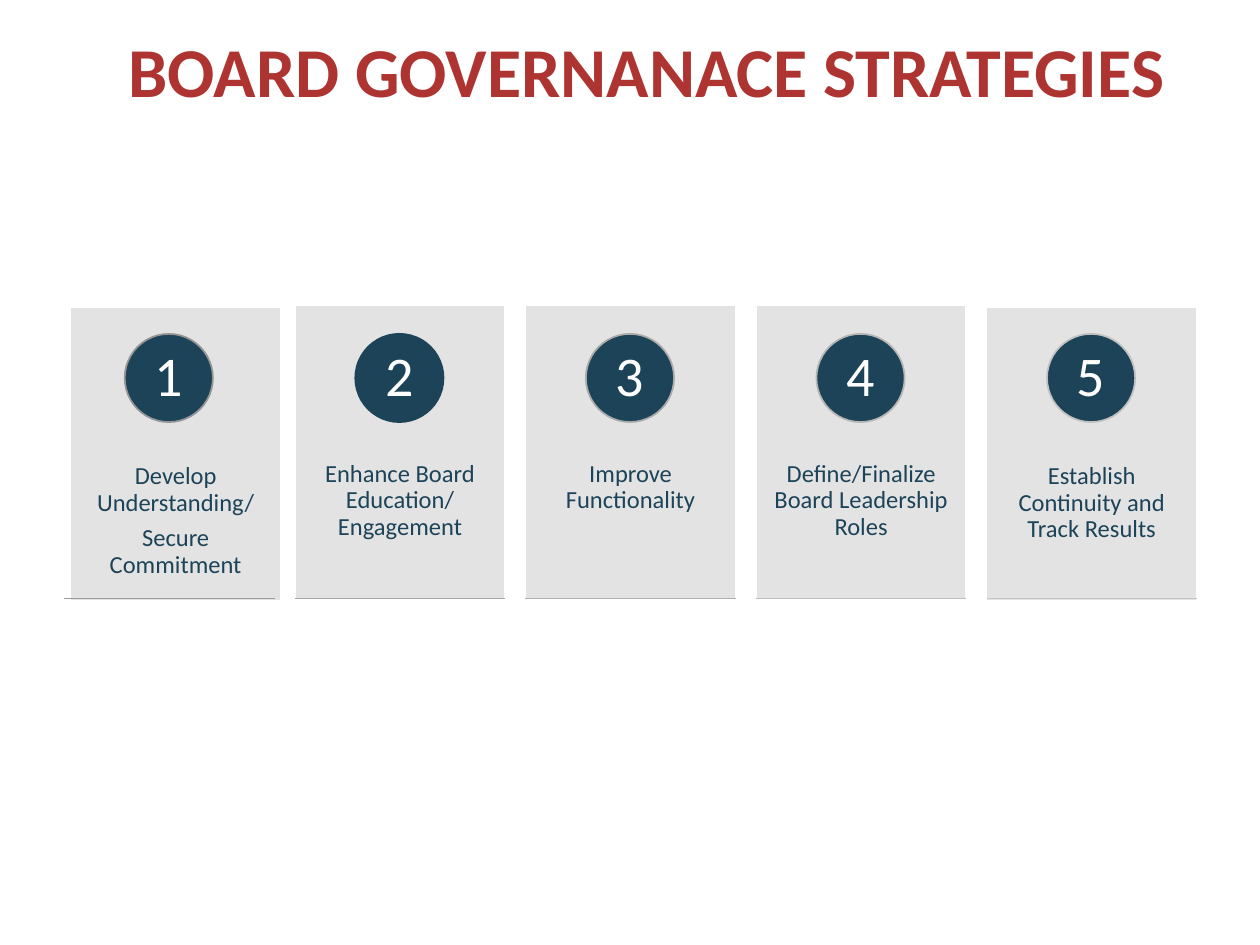
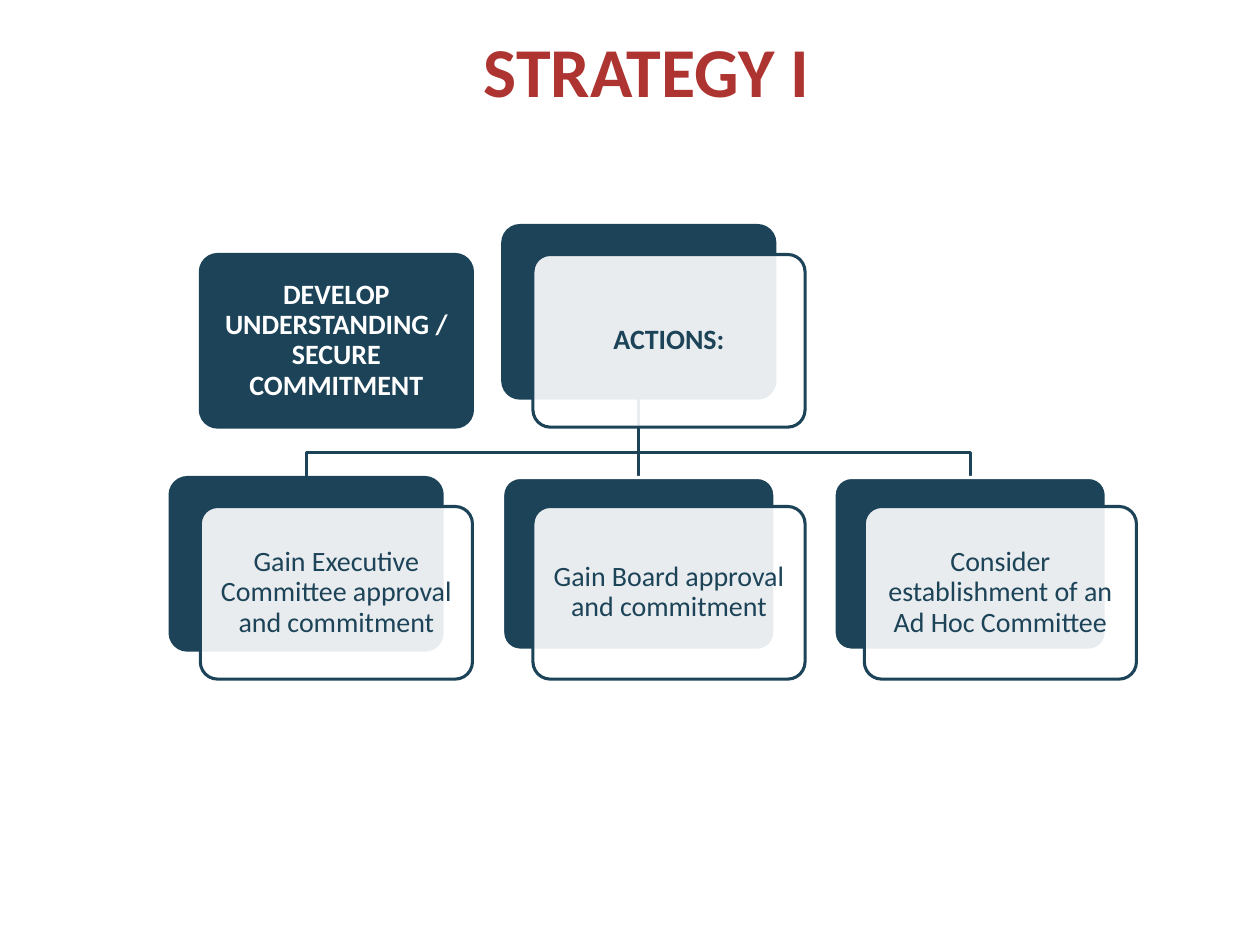
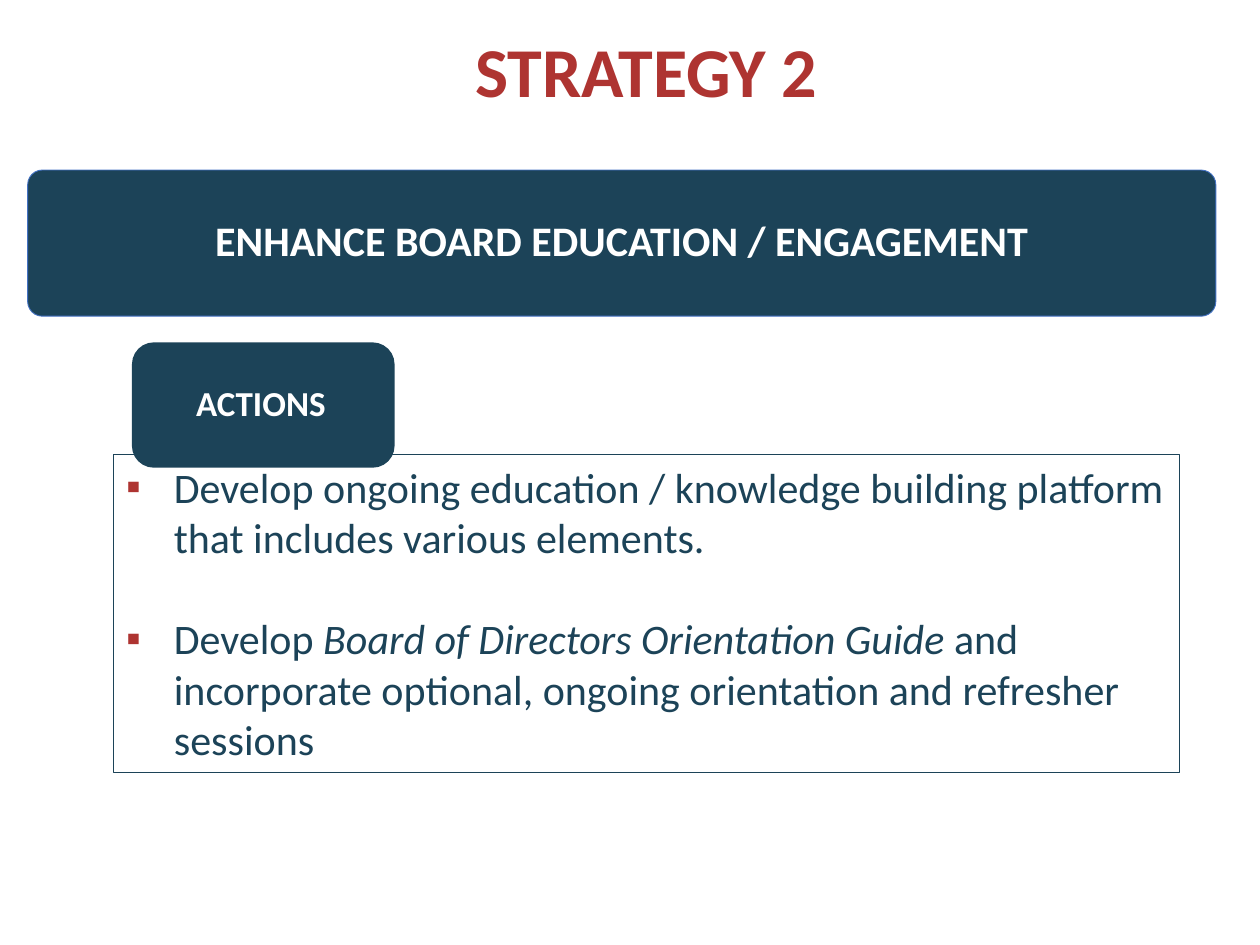
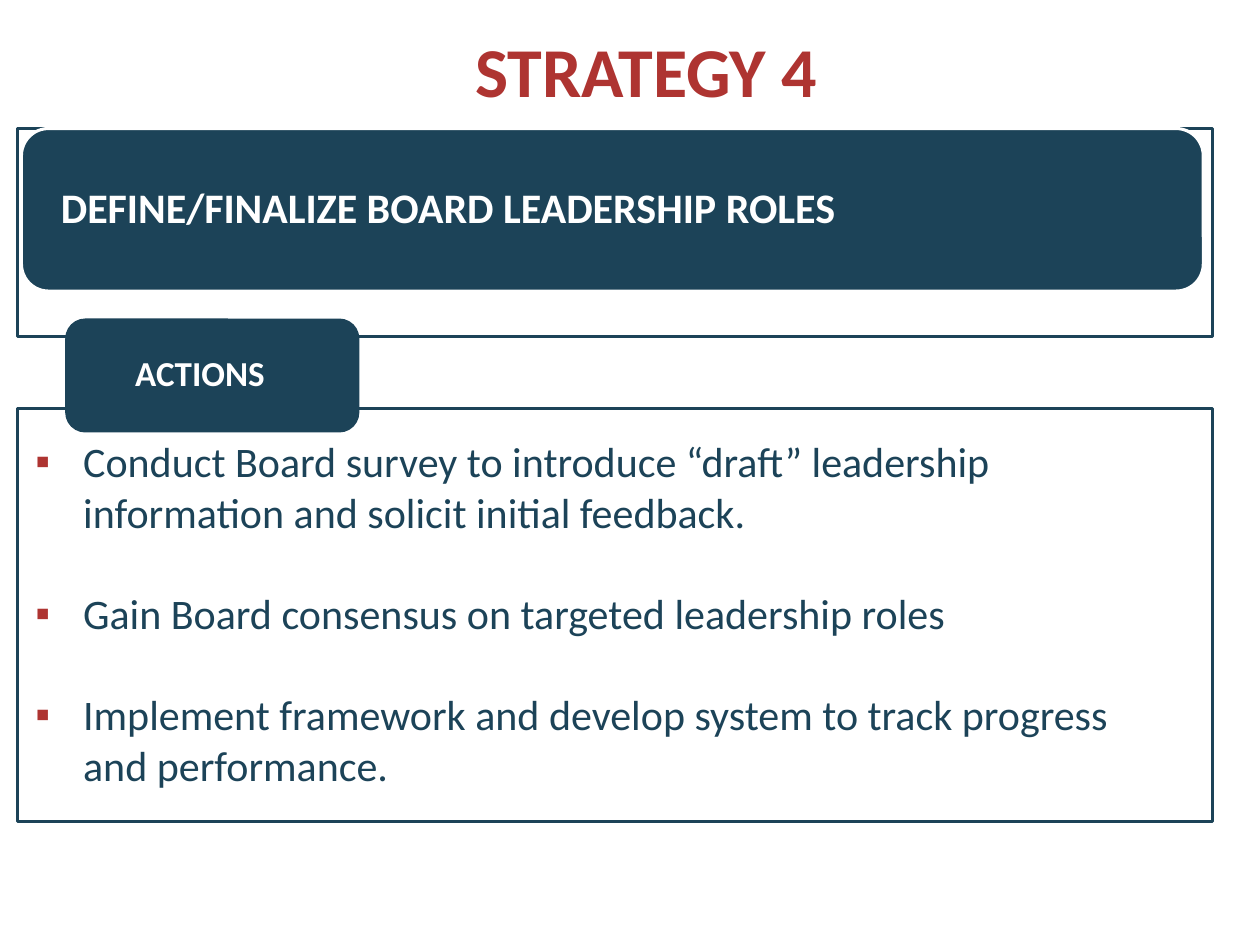
"""Build four board governance strategy slides."""
from lxml import etree
from pptx import Presentation, util as u
from pptx.dml import color
from pptx.enum import shapes as sh, text as tx
from pptx.oxml import ns

PX = 9144
NAVY, RED, WHITE, GREY = "1C4358", "AE3431", "FFFFFF", "E1E1E1"
RECT, ROUND, OVAL = (sh.MSO_SHAPE.RECTANGLE, sh.MSO_SHAPE.ROUNDED_RECTANGLE,
                     sh.MSO_SHAPE.OVAL)
TOP, MID = tx.MSO_ANCHOR.TOP, tx.MSO_ANCHOR.MIDDLE
LEFT, MIDDLE = tx.PP_ALIGN.LEFT, tx.PP_ALIGN.CENTER


def rgb(code):
    """Turn a hex string into a colour."""
    return color.RGBColor.from_string(code)


def put(item, vals):
    """Set every attribute in a dict of format values."""
    for key, val in vals.items():
        setattr(item, key, val)


def add(top, tag, **vals):
    """Append an XML element with attributes."""
    return etree.SubElement(top, ns.qn(tag), vals)


class Deck:
    """Hold the shared style and the current slide."""

    def __init__(self):
        """Start an empty deck of 10 by 7.5 inches."""
        self.prs = Presentation()
        put(self.prs, {"slide_width": 1000 * PX, "slide_height": 750 * PX})

    def page(self, title, layout=5):
        """Add a slide with its title."""
        self.slide = self.prs.slides.add_slide(self.prs.slide_layouts[layout])
        self.shapes = self.slide.shapes
        head = self.shapes.title
        self.place(head, 38, 24, 950, 88)
        self.label(head, [title], 40, RED, bold=True, anchor=TOP)

    def place(self, shape, *box):
        """Move and size a shape in px."""
        put(shape, dict(zip(("left", "top", "width", "height"),
                            (n * PX for n in box))))

    def ink(self, run, size, hue, **vals):
        """Format one run."""
        put(run.font, {"name": "Calibri", "size": u.Pt(size), **vals})
        run.font.color.rgb = rgb(hue)

    def label(self, shape, paras, size, hue, bold=False, anchor=MID,
              align=MIDDLE, pad=(10, 5, 10, 5)):
        """Fill a shape with plain paragraphs."""
        frame = shape.text_frame
        sides = ("margin_left", "margin_top", "margin_right", "margin_bottom")
        put(frame, {"text": "\n".join(paras), "word_wrap": True,
                    "auto_size": tx.MSO_AUTO_SIZE.NONE,
                    "vertical_anchor": anchor,
                    **dict(zip(sides, (n * PX for n in pad)))})
        for num, para in enumerate(frame.paragraphs):
            put(para, {"alignment": align, "line_spacing": 0.9,
                       "space_before": u.Pt(5 if num else 0)})
            self.ink(para.runs[0], size, hue, bold=bold)

    def edge(self, shape, hue, width):
        """Give a shape its outline."""
        shape.line.color.rgb = rgb(hue)
        shape.line.width = u.Pt(width)

    def box(self, kind, at, fill, line, width=1.75, alpha=None, adj=None):
        """Draw a preset shape."""
        shape = self.shapes.add_shape(kind, *(n * PX for n in at))
        shape.shadow.inherit = False
        shape.fill.solid()
        shape.fill.fore_color.rgb = rgb(fill)
        if alpha:
            paint = shape.element.spPr.find(".//" + ns.qn("a:srgbClr"))
            add(paint, "a:alpha", val=str(alpha * 1000))
        if adj:
            shape.adjustments[0] = adj
        self.edge(shape, line, width)
        return shape

    def line(self, x, y, to, down, hue, width):
        """Draw a straight connector."""
        wire = self.shapes.add_connector(
            sh.MSO_CONNECTOR.STRAIGHT, x * PX, y * PX, to * PX, down * PX)
        self.edge(wire, hue, width)
        add(wire.element.spPr, "a:effectLst")
        return wire

    def bend(self, start, *points):
        """Draw an open path with corners."""
        pen = self.shapes.build_freeform(*start, scale=PX)
        pen.add_line_segments(points, close=False)
        trace = pen.convert_to_shape()
        trace.shadow.inherit = False
        trace.fill.background()
        self.edge(trace, NAVY, 1.75)
        return trace

    def back(self, shape):
        """Send a shape behind all others."""
        shape.element.getparent().insert(2, shape.element)

    def points(self, at, items):
        """Fill the body with bullets; asterisks mark italics."""
        body = self.slide.placeholders[1]
        body.element.getparent().append(body.element)
        self.place(body, *at)
        frame = body.text_frame
        put(frame, {"auto_size": tx.MSO_AUTO_SIZE.NONE, "word_wrap": True,
                    "vertical_anchor": TOP})
        dent = str(38 * PX)
        for num, item in enumerate(items):
            para = frame.add_paragraph() if num else frame.paragraphs[0]
            props = para._p.get_or_add_pPr()
            props.set("marL", dent)
            props.set("indent", "-" + dent)
            add(add(props, "a:buClr"), "a:srgbClr", val=RED)
            add(props, "a:buChar", char="▪")
            put(para, {"alignment": LEFT, "line_spacing": 1.0,
                       "space_before": u.Pt(29 if num else 0)})
            for part, words in enumerate(item.split("*")):
                run = para.add_run()
                run.text = words
                self.ink(run, 24, NAVY, italic=part % 2 == 1)
        return body

    def tab(self, at, inset):
        """Draw the label above a list of actions."""
        shape = self.box(ROUND, at, NAVY, NAVY)
        self.label(shape, ["ACTIONS"], 20, WHITE, True, align=LEFT,
                   pad=(inset + 25, 0, inset, 0))

    def card(self, x, y, words, bold=False, rim=NAVY):
        """Draw a pale text card over a dark one, and return the dark one."""
        dark = self.box(ROUND, (x, y, 216, 137), NAVY, rim, adj=0.1)
        pale = self.box(ROUND, (x + 24, y + 23, 216, 137), WHITE, NAVY,
                        alpha=90, adj=0.1)
        self.label(pale, [words], 16, NAVY, bold, pad=(7, 7, 7, 7))
        return dark


def steps(deck):
    """Show the five strategies side by side."""
    deck.page("BOARD GOVERNANACE STRATEGIES")
    cards = [
        (["Develop Understanding/", "Secure Commitment"], "969696", "9B9B9B"),
        (["Enhance Board Education/ Engagement"], NAVY, "A6A6A6"),
        (["Improve Functionality"], "ABABAB", "B1B1B1"),
        (["Define/Finalize Board Leadership Roles"], "B6B6B6", "BCBCBC"),
        (["Establish Continuity and Track Results"], "C1C1C1", "C6C6C6")]
    for num, (words, rim, base) in enumerate(cards):
        x = 51 + 183 * num
        left = x if num else 56
        top = 244 if num in (0, 4) else 242
        panel = deck.box(RECT, (left, top, 167, 233), GREY, WHITE, 1, 90)
        deck.label(panel, words, 14, NAVY, anchor=TOP, pad=(13, 124, 13, 0))
        disc = deck.box(OVAL, (x + 48, 265, 70, 70), NAVY, rim, 1)
        deck.label(disc, [str(num + 1)], 32, WHITE, pad=(5, 1, 5, 1))
        deck.line(x, 475, x + 167, 475, base, 1)


def tree(deck):
    """Show the actions of the first strategy as a tree."""
    deck.page("STRATEGY I")
    goal = deck.box(ROUND, (159, 202, 216, 137), NAVY, NAVY, adj=0.1)
    deck.label(goal, ["DEVELOP UNDERSTANDING / SECURE COMMITMENT"], 16, WHITE,
               True, pad=(7, 7, 7, 7))
    root = deck.card(399, 179, "ACTIONS:", True)
    deck.card(135, 379, "Gain Executive Committee approval and commitment")
    mid = deck.card(399, 379, "Gain Board approval and commitment", rim=WHITE)
    deck.card(662, 379, "Consider establishment of an Ad Hoc Committee",
              rim=WHITE)
    stem = deck.line(507, 316, 507, 379, NAVY, 1.75)
    stem.begin_connect(root, 2)
    stem.end_connect(mid, 0)
    deck.back(stem)
    for x in (243, 770):
        deck.back(deck.bend((507, 316), (507, 359), (x, 359), (x, 379)))


def learn(deck):
    """Show the actions of the second strategy."""
    deck.page("STRATEGY 2", 1)
    band = deck.box(ROUND, (22, 135, 943, 116), NAVY, "4472C4", 0.5, adj=0.1)
    deck.label(band, ["ENHANCE BOARD EDUCATION / ENGAGEMENT"], 24, WHITE, True,
               pad=(10, 10, 10, 10))
    body = deck.points((90, 361, 846, 252), [
        "Develop ongoing education / knowledge building platform that "
        "includes various elements.",
        "Develop *Board of Directors Orientation Guide *and incorporate "
        "optional, ongoing orientation and refresher sessions"])
    body.fill.solid()
    body.fill.fore_color.rgb = rgb(WHITE)
    deck.edge(body, NAVY, 0.5)
    deck.tab((106, 273, 206, 97), 20)


def lead(deck):
    """Show the actions of the fourth strategy."""
    deck.page("STRATEGY 4", 1)
    deck.box(RECT, (14, 102, 948, 165), WHITE, NAVY, alpha=90)
    band = deck.box(ROUND, (17, 102, 938, 129), NAVY, WHITE)
    deck.label(band, ["DEFINE/FINALIZE BOARD LEADERSHIP ROLES"], 24, WHITE,
               True, align=LEFT, pad=(25, 0, 25, 0))
    deck.box(RECT, (14, 324, 948, 328), WHITE, NAVY, alpha=90)
    deck.tab((53, 254, 231, 88), 25)
    deck.points((18, 341, 928, 293), [
        "Conduct Board survey to introduce “draft” leadership information "
        "and solicit initial feedback.",
        "Gain Board consensus on targeted leadership roles",
        "Implement framework and develop system to track progress and "
        "performance."])


def main():
    """Build and save the deck."""
    deck = Deck()
    for build in (steps, tree, learn, lead):
        build(deck)
    deck.prs.save("out.pptx")


if __name__ == "__main__":
    main()
